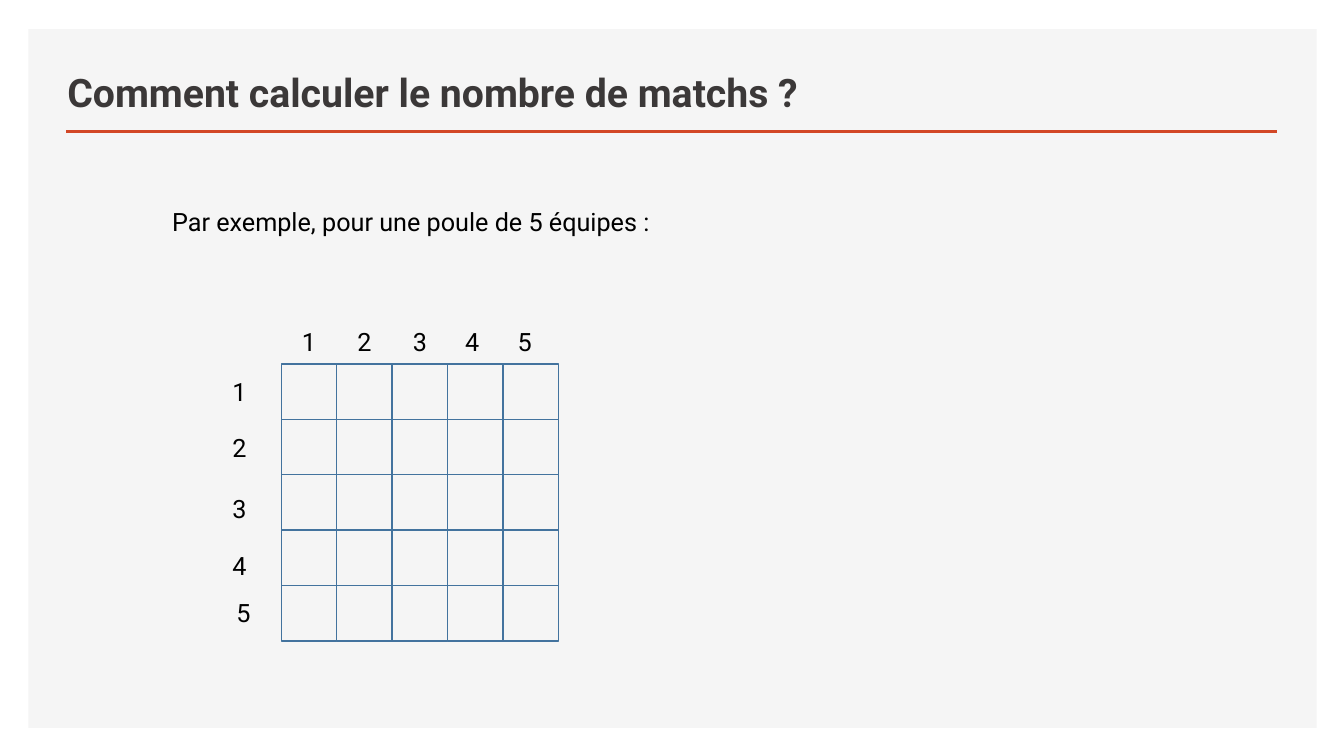
from dataclasses import dataclass

from pptx import Presentation
from pptx.dml.color import RGBColor as RGB
from pptx.enum.shapes import MSO_CONNECTOR as CONN, MSO_SHAPE as SHAPE
from pptx.enum.text import MSO_ANCHOR as ANCHOR, PP_ALIGN as ALIGN
from pptx.oxml.ns import qn
from pptx.util import Pt
from lxml.etree import SubElement


@dataclass(frozen=True)
class Theme:
    font: str = "Roboto"
    panel: RGB = RGB(0xF5, 0xF5, 0xF5)
    accent: RGB = RGB(0xD2, 0x47, 0x26)
    grid: RGB = RGB(0x43, 0x73, 0x9E)
    title: RGB = RGB(0x3B, 0x38, 0x38)
    text: RGB = RGB(0, 0, 0)
    title_size: int = 28
    text_size: int = 18


THEME = Theme()
TEAMS = 5
CELL = 39.6
GRID_LEFT, GRID_TOP = 200.9, 259.9
LABEL_HEIGHT = 28.8
COLUMN_LABEL_TOP = 229.7
COLUMN_LABEL_LEFTS = (200.9, 240.5, 280.1, 317.5, 355)
ROW_LABELS = ((151.2, 265), (151.2, 305.3), (151.2, 348.5), (151.2, 389.5), (154.1, 423.4))


def add_rect(slide, left, top, width, height, fill=None, line=None):
    sp = slide.shapes.add_shape(SHAPE.RECTANGLE, Pt(left), Pt(top), Pt(width), Pt(height))
    sp.shadow.inherit = False
    if fill is None:
        sp.fill.background()
    else:
        sp.fill.solid()
        sp.fill.fore_color.rgb = fill
    if line is None:
        sp.line.fill.background()
    else:
        sp.line.color.rgb = line
        sp.line.width = Pt(1)


def add_rule(slide, left, right, y):
    rule = slide.shapes.add_connector(CONN.STRAIGHT, Pt(left), Pt(y), Pt(right), Pt(y))
    rule.line.color.rgb = THEME.accent
    rule.line.width = Pt(2)
    SubElement(rule._element.spPr, qn("a:effectLst"))


def add_text(slide, text, left, top, width, height=LABEL_HEIGHT, align=ALIGN.LEFT,
             anchor=ANCHOR.TOP, size=THEME.text_size, color=THEME.text, bold=False):
    tf = slide.shapes.add_textbox(Pt(left), Pt(top), Pt(width), Pt(height)).text_frame
    tf.word_wrap = True
    tf.vertical_anchor = anchor
    p = tf.paragraphs[0]
    p.alignment = align
    r = p.add_run()
    r.text = text
    for name, value in {"name": THEME.font, "size": Pt(size), "bold": bold}.items():
        setattr(r.font, name, value)
    r.font.color.rgb = color


def add_match_grid(slide):
    for row in range(TEAMS):
        for column in range(TEAMS):
            add_rect(slide, GRID_LEFT + column * CELL, GRID_TOP + row * CELL,
                     CELL, CELL, line=THEME.grid)
    column_labels = [(left, COLUMN_LABEL_TOP) for left in COLUMN_LABEL_LEFTS]
    for labels in (column_labels, ROW_LABELS):
        for team, (left, top) in enumerate(labels, 1):
            add_text(slide, str(team), left, top, CELL, align=ALIGN.CENTER)


def main():
    prs = Presentation()
    prs.slide_width, prs.slide_height = Pt(960), Pt(540)
    s = prs.slides.add_slide(prs.slide_layouts[6])
    add_rect(s, 20.2, 20.9, 920.2, 499, fill=THEME.panel)
    add_rule(s, 47.5, 912.2, 94)
    add_text(s, "Comment calculer le nombre de matchs ?", 41, 35.3, 849.6, 50.4,
             anchor=ANCHOR.BOTTOM, size=THEME.title_size, color=THEME.title, bold=True)
    add_match_grid(s)
    add_text(s, "Par exemple, pour une poule de 5 équipes :", 115.9, 144, 386.6)
    prs.save("out.pptx")


if __name__ == "__main__":
    main()
